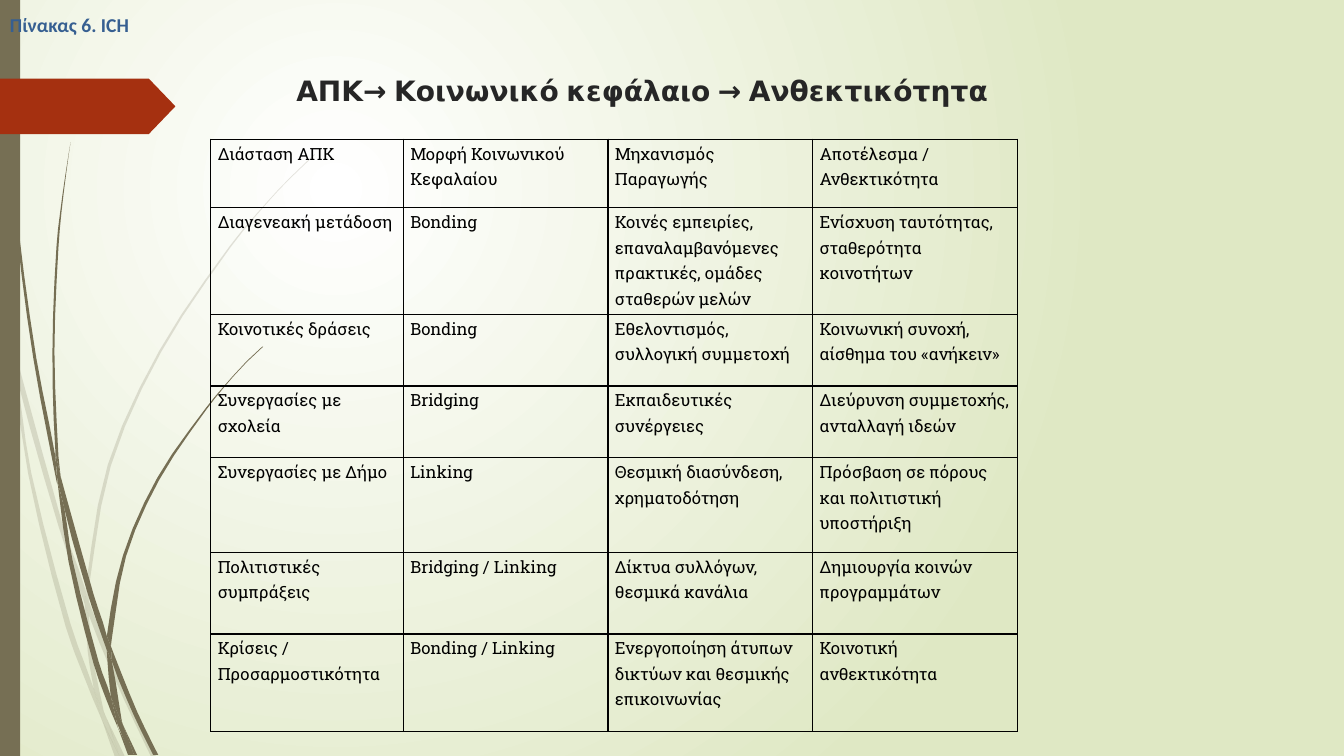
import math

import lxml.etree
import pptx
import pptx.dml.color
import pptx.enum.lang
import pptx.enum.shapes
import pptx.oxml.ns
import pptx.util

Inches = pptx.util.Inches
HUES = {
    "white": "FFFFFF", "sage": "DFE8C4", "bark": "766F54", "rust": "A53010",
    "title": "262626", "label": "365F91", "black": "000000",
}
PALE = [
    [(.11, 3.5), (.09, 3.22), (0, 2.82), (0, 2.99), (.1, 3.44)],
    [(.58, 5.22), (.84, 5.99), (.85, 5.86), (.62, 5.2), (.14, 3.45), (.17, 3.76)],
    [(.92, 6.07), (.88, 5.96), (.88, 6.1), (1.23, 6.94), (1.5, 7.51), (1.55, 7.51),
     (1.27, 6.92)],
    [(1.19, 7.51), (1.24, 7.51), (1.05, 7.11)],
    [(.93, 6.83), (.7, 6.19), (.31, 4.69), (.17, 3.76), (.11, 3.5), (.28, 4.7),
     (.65, 6.21), (.92, 6.93), (1.01, 7.14), (.99, 7.07)],
    [(.84, 5.99), (.87, 6.46), (.93, 6.83), (.96, 6.92), (1.05, 7.11), (1.03, 7.06),
     (.91, 6.46), (.88, 6.1)],
    [(.88, 5.84), (1.1, 4.62), (1.6, 3.49), (2.29, 2.45), (2.68, 1.98), (2.9, 1.75),
     (3.12, 1.54), (3.12, 1.53), (2.89, 1.75), (2.68, 1.97), (2.28, 2.44),
     (1.58, 3.48), (1.07, 4.61), (.85, 5.84), (.88, 5.96)],
    [(1.01, 7.14), (1.14, 7.51), (1.19, 7.51)],
    [(.88, 6.1), (.88, 5.96), (.85, 5.86), (.84, 5.99)],
    [(.96, 6.92), (.93, 6.83), (.99, 7.07), (1.01, 7.14), (1.19, 7.51), (1.05, 7.11)],
]
DARK = [
    [(.07, 1.1), (.17, 2.33), (.33, 3.55), (.56, 4.77), (.57, 4.81), (.55, 4.53),
     (.36, 3.55), (.19, 2.32), (.08, 1.09), (.05, .48), (.04, 0), (.03, 0),
     (.04, .48)],
    [(.88, 5.92), (1.06, 6.45), (1.06, 6.31), (.93, 5.9), (.6, 4.72), (.64, 5.05)],
    [(1.13, 6.49), (1.1, 6.41), (1.11, 6.56), (1.32, 7.08), (1.52, 7.49),
     (1.57, 7.49), (1.36, 7.06)],
    [(1.1, 6.91), (.98, 6.57), (.72, 5.56), (.64, 5.05), (.57, 4.77), (.68, 5.57),
     (.93, 6.59), (1.11, 7.08), (1.17, 7.22), (1.16, 7.17)],
    [(.6, 4.72), (.58, 4.53), (.54, 3.49), (.58, 2.45), (.63, 1.93), (.7, 1.41),
     (.62, 1.93), (.56, 2.45), (.52, 3.49), (.55, 4.49)],
    [(1.33, 7.49), (1.36, 7.49), (1.22, 7.19)],
    [(.57, 4.77), (.64, 5.05), (.6, 4.72), (.55, 4.49), (.55, 4.53)],
    [(1.11, 6.33), (1.25, 5.52), (1.58, 4.76), (2.05, 4.06), (2.31, 3.74),
     (2.45, 3.59), (2.61, 3.44), (2.6, 3.44), (2.45, 3.58), (2.31, 3.73),
     (2.04, 4.05), (1.56, 4.74), (1.22, 5.51), (1.06, 6.31), (1.1, 6.41)],
    [(1.17, 7.22), (1.27, 7.49), (1.31, 7.49)],
    [(1.06, 6.45), (1.1, 6.91), (1.16, 7.06), (1.22, 7.19), (1.21, 7.16),
     (1.11, 6.56)],
    [(1.06, 6.45), (1.11, 6.56), (1.1, 6.41), (1.06, 6.31)],
    [(1.16, 7.06), (1.1, 6.91), (1.16, 7.17), (1.3, 7.49), (1.33, 7.49), (1.22, 7.19)],
]
COLS = [1.91, 2.03, 2.03, 2.03]
ROWS = [.68, 1.06, .71, .71, .94, .81, .97]
CELLS = [
    ["Διάσταση ΑΠΚ", "Μορφή Κοινωνικού Κεφαλαίου", "Μηχανισμός Παραγωγής",
     "Αποτέλεσμα / Ανθεκτικότητα"],
    ["Διαγενεακή μετάδοση", "Bonding",
     "Κοινές εμπειρίες, επαναλαμβανόμενες πρακτικές, ομάδες σταθερών μελών",
     "Ενίσχυση ταυτότητας, σταθερότητα κοινοτήτων"],
    ["Κοινοτικές δράσεις", "Bonding", "Εθελοντισμός, συλλογική συμμετοχή",
     "Κοινωνική συνοχή, αίσθημα του «ανήκειν»"],
    ["Συνεργασίες με σχολεία", "Bridging", "Εκπαιδευτικές συνέργειες",
     "Διεύρυνση συμμετοχής, ανταλλαγή ιδεών"],
    ["Συνεργασίες με Δήμο", "Linking", "Θεσμική διασύνδεση, χρηματοδότηση",
     "Πρόσβαση σε πόρους και πολιτιστική υποστήριξη"],
    ["Πολιτιστικές συμπράξεις", "Bridging / Linking",
     "Δίκτυα συλλόγων, θεσμικά κανάλια", "Δημιουργία κοινών προγραμμάτων"],
    ["Κρίσεις / Προσαρμοστικότητα", "Bonding / Linking",
     "Ενεργοποίηση άτυπων δικτύων και θεσμικής επικοινωνίας",
     "Κοινοτική ανθεκτικότητα"],
]


def tint(name):
    """Return the named colour."""
    return pptx.dml.color.RGBColor.from_string(HUES[name])


def write(frame, words, font, size, hue, bold=False, lead=None, after=None):
    """Put one formatted paragraph in a text frame."""
    para = frame.paragraphs[0]
    para.line_spacing = lead
    if after is not None:
        para.space_after = pptx.util.Pt(after)
    run = para.add_run()
    run.text = words
    run.font.language_id = pptx.enum.lang.MSO_LANGUAGE_ID.GREEK
    run.font.name = font
    run.font.size = pptx.util.Pt(size)
    run.font.bold = bold
    run.font.color.rgb = tint(hue)


def label(slide, box, words, wrap=True, top=.05, **style):
    """Add a text box."""
    frame = slide.shapes.add_textbox(*map(Inches, box)).text_frame
    frame.word_wrap = wrap
    frame.margin_top = Inches(top)
    write(frame, words, **style)


def paint(shape, hue, alpha=100):
    """Give a shape a plain fill without line or shadow."""
    shape.shadow.inherit = False
    shape.line.fill.background()
    shape.fill.solid()
    shape.fill.fore_color.rgb = tint(hue)
    if alpha < 100:
        node = shape._element.spPr.find(".//" + pptx.oxml.ns.qn("a:srgbClr"))
        lxml.etree.SubElement(node, pptx.oxml.ns.qn("a:alpha"),
                              val=str(alpha * 1000))


def block(slide, kind, box, hue):
    """Add a filled preset shape."""
    shape = slide.shapes.add_shape(kind, *map(Inches, box))
    paint(shape, hue)
    return shape


def slope(a, b, c):
    """Return the tangent at b, or none at a corner."""
    into, out = math.dist(a, b), math.dist(b, c)
    dot = sum((q - p) * (r - q) for p, q, r in zip(a, b, c))
    if dot < .8 * into * out:
        return 0, 0
    return [(r - p) / (into + out) for p, r in zip(a, c)]


def smooth(knots, steps=3):
    """Round a closed outline between its corners."""
    count = len(knots)
    turns = [slope(knots[i - 1], knots[i], knots[(i + 1) % count])
             for i in range(count)]
    edge = []
    for i, start in enumerate(knots):
        after = (i + 1) % count
        end, span = knots[after], math.dist(start, knots[after])
        for step in range(steps if span > .3 else 1):
            t = step / steps
            ease = t * t * (3 - 2 * t)
            edge.append([
                p + (q - p) * ease
                + span * (u * t * (1 - t) ** 2 - v * t * t * (1 - t))
                for p, q, u, v in zip(start, end, turns[i], turns[after])])
    return edge


def blade(slide, knots, alpha):
    """Draw one piece of grass."""
    edge = [(x * 1000, y * 1000) for x, y in smooth(knots)]
    form = slide.shapes.build_freeform(*edge[0], scale=Inches(1) / 1000)
    form.add_line_segments(edge[1:], close=True)
    paint(form.convert_to_shape(), "bark", alpha)


def backdrop(slide):
    """Fill the background with a round gradient."""
    fill = slide.background.fill
    fill.gradient()
    for stop, hue in zip(fill.gradient_stops, ("white", "sage")):
        stop.color.rgb = tint(hue)
    grad = slide._element.find(".//" + pptx.oxml.ns.qn("a:gradFill"))
    grad.remove(grad.find(pptx.oxml.ns.qn("a:lin")))
    ring = lxml.etree.SubElement(grad, pptx.oxml.ns.qn("a:path"), path="circle")
    lxml.etree.SubElement(ring, pptx.oxml.ns.qn("a:fillToRect"),
                          l="50000", t="50000", r="100000", b="100000")


def border(cell):
    """Draw thin black lines round a cell."""
    props = cell._tc.get_or_add_tcPr()
    for side in ("lnL", "lnR", "lnT", "lnB"):
        line = lxml.etree.SubElement(props, pptx.oxml.ns.qn("a:" + side), w="12700")
        fill = lxml.etree.SubElement(line, pptx.oxml.ns.qn("a:solidFill"))
        lxml.etree.SubElement(fill, pptx.oxml.ns.qn("a:srgbClr"), val=HUES["black"])


def grid(slide, left, top):
    """Add the table."""
    table = slide.shapes.add_table(len(ROWS), len(COLS), Inches(left), Inches(top),
                                   Inches(sum(COLS)), Inches(sum(ROWS))).table
    table.first_row = table.horz_banding = False
    for col, wide in zip(table.columns, COLS):
        col.width = Inches(wide)
    for row, high, texts in zip(table.rows, ROWS, CELLS):
        row.height = Inches(high)
        for cell, words in zip(row.cells, texts):
            cell.margin_left = cell.margin_right = Inches(.07)
            cell.margin_top = cell.margin_bottom = 0
            border(cell)
            cell.fill.background()
            write(cell.text_frame, words, font="Roboto Slab", size=12,
                  hue="black", lead=1.15, after=10)


def main():
    """Build and save the slide."""
    deck = pptx.Presentation()
    deck.slide_width, deck.slide_height = Inches(13.33), Inches(7.5)
    slide = deck.slides.add_slide(deck.slide_layouts[6])
    backdrop(slide)
    for group, alpha in ((PALE, 20), (DARK, 100)):
        for knots in group:
            blade(slide, knots, alpha)
    kinds = pptx.enum.shapes.MSO_SHAPE
    block(slide, kinds.RECTANGLE, (0, 0, .2, 7.5), "bark")
    arrow = block(slide, kinds.PENTAGON, (0, .78, 1.74, .55), "rust")
    arrow.adjustments[0] = .48
    label(slide, (2.84, .68, 9.75, 1.4), "ΑΠΚ→ Κοινωνικό κεφάλαιο → Ανθεκτικότητα",
          font="League Spartan", size=20, hue="title", bold=True)
    grid(slide, 2.09, 1.38)
    label(slide, (0, -.21, 1.39, .93), "Πίνακας 6. ICH", wrap=False, top=.34,
          font="Calibri", size=14, hue="label", bold=True)
    deck.save("out.pptx")


if __name__ == "__main__":
    main()
